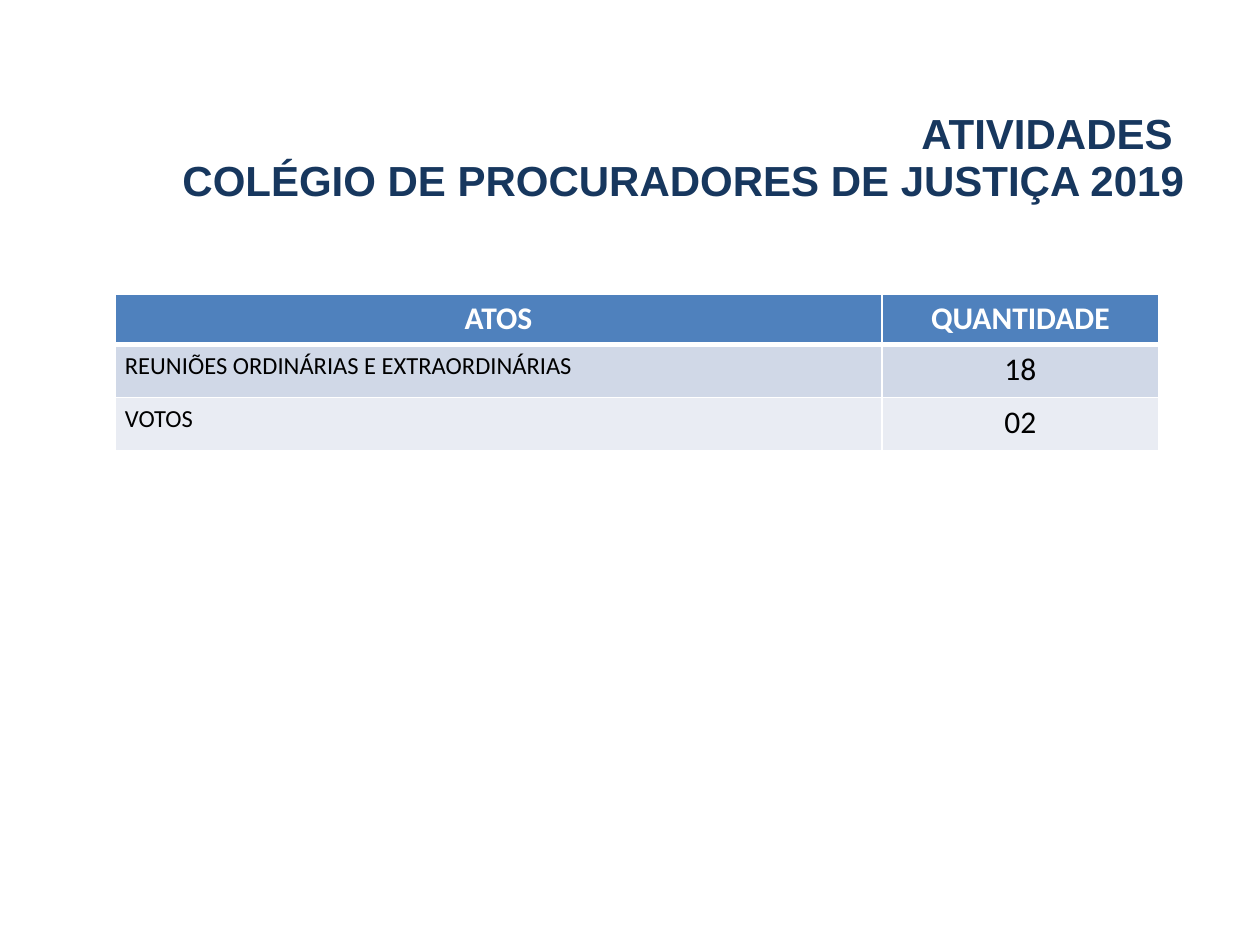
from lxml.etree import SubElement
from pptx import Presentation
from pptx.dml.color import RGBColor
from pptx.enum.text import MSO_ANCHOR, MSO_AUTO_SIZE, PP_ALIGN as Align
from pptx.oxml.ns import qn
from pptx.util import Emu, Pt

PX_PER_INCH = 126
THIN, THICK = 0.96, 3
HEADERS = ("ATOS", "QUANTIDADE")
ACTS = (("REUNIÕES ORDINÁRIAS E EXTRAORDINÁRIAS", "18"), ("VOTOS", "02"))
COLUMN_WIDTHS = (767, 277)
ROW_HEIGHTS = (50, 53, 53)
ROW_FILLS = ("4F81BD", "D0D8E7", "E9ECF3")


def px(length):
    return Emu(round(length * 914400 / PX_PER_INCH))


def color(hex_value):
    return RGBColor.from_string(hex_value)


def set_attributes(target, values):
    for name, value in values.items():
        setattr(target, name, value)


def format_font(font, name, size, hex_value, bold=False):
    set_attributes(font, {"name": name, "size": Pt(size), "bold": bold})
    font.color.rgb = color(hex_value)


def add_title(slide):
    title = slide.shapes.title
    set_attributes(title, {"left": px(126), "top": px(86),
                           "width": px(1071), "height": px(110)})
    frame = title.text_frame
    set_attributes(frame, {"word_wrap": True, "auto_size": MSO_AUTO_SIZE.NONE,
                           "vertical_anchor": MSO_ANCHOR.MIDDLE})
    heading = frame.paragraphs[0]
    set_attributes(heading, {"alignment": Align.RIGHT, "line_spacing": 0.93})
    format_font(heading.font, "Arial", 18, "000000")
    for line in ("ATIVIDADES ", "COLÉGIO DE PROCURADORES DE JUSTIÇA 2019"):
        heading.add_line_break()
        run = heading.add_run()
        run.text = line
        format_font(run.font, "Arial", 24, "17375E", True)


def set_borders(cell, top, bottom):
    """Draw white borders; they must precede the fill in the cell properties."""
    properties = cell._tc.get_or_add_tcPr()
    widths = {"a:lnL": THIN, "a:lnR": THIN, "a:lnT": top, "a:lnB": bottom}
    for position, (tag, width) in enumerate(widths.items()):
        border = SubElement(properties, qn(tag), w=str(Pt(width)))
        fill = SubElement(border, qn("a:solidFill"))
        SubElement(fill, qn("a:srgbClr"), val="FFFFFF")
        properties.insert(position, border)


def fill_cell(cell, text, row, column):
    is_header = row == 0
    is_act_name = column == 0 and not is_header
    cell.fill.solid()
    cell.fill.fore_color.rgb = color(ROW_FILLS[row])
    set_borders(cell, THICK if row == 1 else THIN, THICK if is_header else THIN)
    side = px(10 if is_act_name else 14)
    set_attributes(cell, {"margin_left": side, "margin_right": side,
                          "margin_top": px(6), "margin_bottom": px(6),
                          "vertical_anchor": MSO_ANCHOR.TOP})
    paragraph = cell.text_frame.paragraphs[0]
    paragraph.alignment = Align.LEFT if is_act_name else Align.CENTER
    if is_act_name:
        paragraph.line_spacing = 1.02
    run = paragraph.add_run()
    run.text = text
    format_font(run.font, "Calibri", 14 if is_act_name else 18,
                "FFFFFF" if is_header else "000000", is_header)


def add_acts_table(slide):
    rows = (HEADERS, *ACTS)
    table = slide.shapes.add_table(
        len(rows), len(HEADERS), px(115), px(294),
        px(sum(COLUMN_WIDTHS)), px(sum(ROW_HEIGHTS))).table
    for column, width in zip(table.columns, COLUMN_WIDTHS):
        column.width = px(width)
    for row, height in zip(table.rows, ROW_HEIGHTS):
        row.height = px(height)
    for r, texts in enumerate(rows):
        for c, text in enumerate(texts):
            fill_cell(table.cell(r, c), text, r, c)


def main():
    deck = Presentation()
    set_attributes(deck, {"slide_width": px(1260), "slide_height": px(945)})
    slide = deck.slides.add_slide(deck.slide_layouts[5])
    add_title(slide)
    add_acts_table(slide)
    deck.save("out.pptx")


if __name__ == "__main__":
    main()
